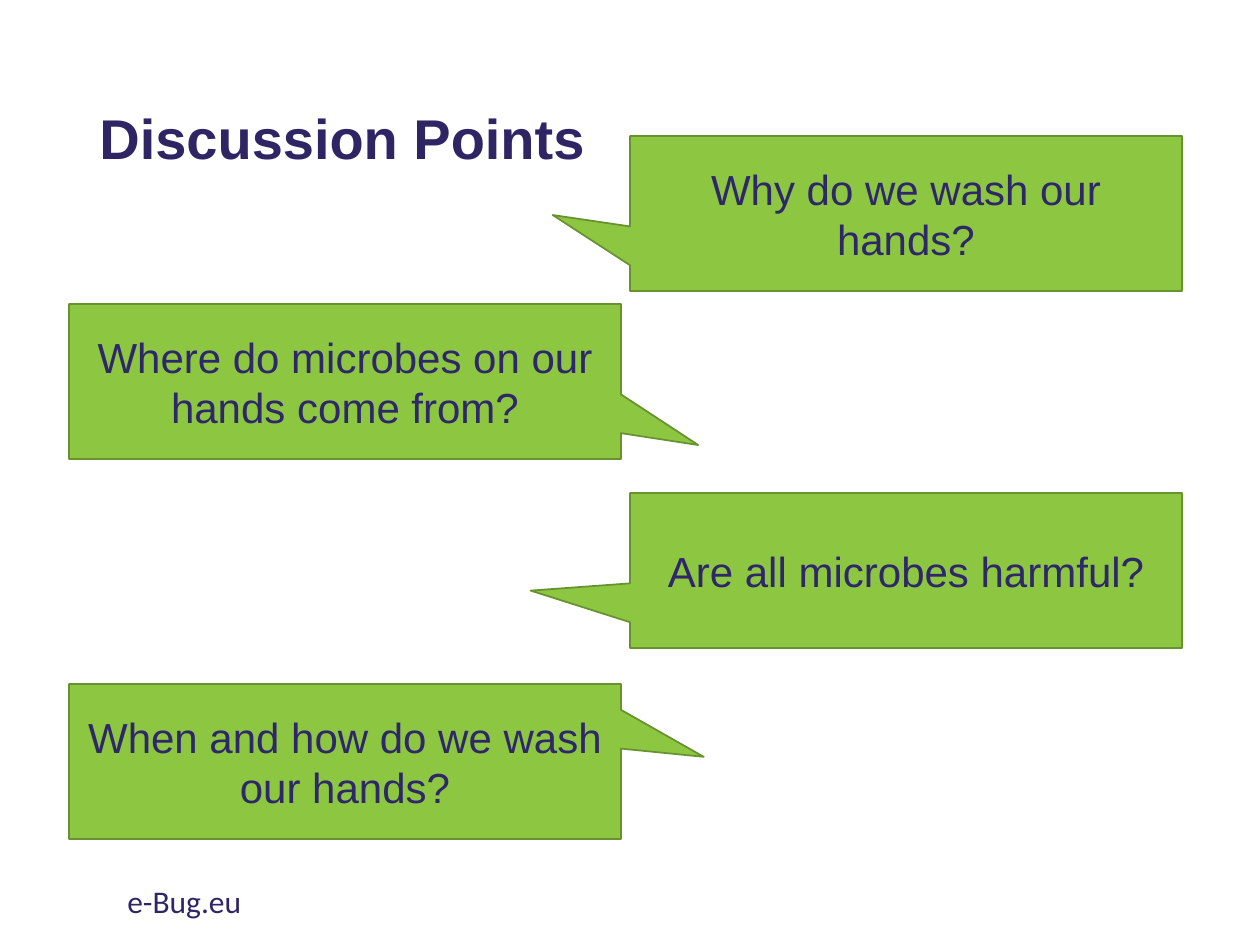
from pptx import Presentation
from pptx.dml.color import RGBColor
from pptx.enum.shapes import MSO_SHAPE as Shape
from pptx.enum.text import MSO_ANCHOR as Anchor, PP_ALIGN as Align
from pptx.util import Emu, Pt

SCALE = 914400 / 126
LEFT, RIGHT = 69, 630
WIDE, HIGH = 552, 155
NAVY, INK = "302564", "2E276A"
GREEN, EDGE = "8DC641", "689230"

# left, top, tip offset across and down as shares of the size, question
POINTS = [
    (RIGHT, 136, -0.64, 0.01, "Why do we wash our hands?"),
    (LEFT, 304, 0.64, 0.41, "Where do microbes on our hands come from?"),
    (RIGHT, 493, -0.68, 0.13, "Are all microbes harmful?"),
    (LEFT, 684, 0.65, -0.03, "When and how do we wash our hands?"),
]


def px(*sizes):
    return [Emu(round(size * SCALE)) for size in sizes]


def color(code):
    return RGBColor.from_string(code)


def write(shape, text, font, size, ink, bold=False, align=Align.LEFT, anchor=Anchor.MIDDLE):
    """Put one styled run in the shape and return its paragraph."""
    frame = shape.text_frame
    frame.word_wrap = True
    frame.vertical_anchor = anchor
    para = frame.paragraphs[0]
    para.alignment = align
    run = para.add_run()
    run.text = text
    run.font.name = font
    run.font.size = Pt(size)
    run.font.bold = bold
    run.font.color.rgb = color(ink)
    return para


def add_title(slide, text):
    box = slide.shapes.add_textbox(*px(87, 50, 1086, 183))
    write(box, text, "Arial", 32, NAVY, bold=True).line_spacing = 0.9


def add_footer(slide, text):
    box = slide.shapes.add_textbox(*px(115, 876, 426, 50))
    write(box, text, "Calibri", 18, NAVY, anchor=Anchor.TOP)


def add_callout(slide, left, top, across, down, text):
    box = slide.shapes.add_shape(Shape.RECTANGULAR_CALLOUT, *px(left, top, WIDE, HIGH))
    box.adjustments[0] = across
    box.adjustments[1] = down
    box.shadow.inherit = False
    box.fill.solid()
    box.fill.fore_color.rgb = color(GREEN)
    box.line.color.rgb = color(EDGE)
    box.line.width = Pt(1)
    write(box, text, "Arial", 24, INK, align=Align.CENTER)


def main():
    deck = Presentation()
    deck.slide_width, deck.slide_height = px(1260, 945)
    slide = deck.slides.add_slide(deck.slide_layouts[6])
    add_title(slide, "Discussion Points")
    add_footer(slide, "e-Bug.eu")
    for point in POINTS:
        add_callout(slide, *point)
    deck.save("out.pptx")


if __name__ == "__main__":
    main()
